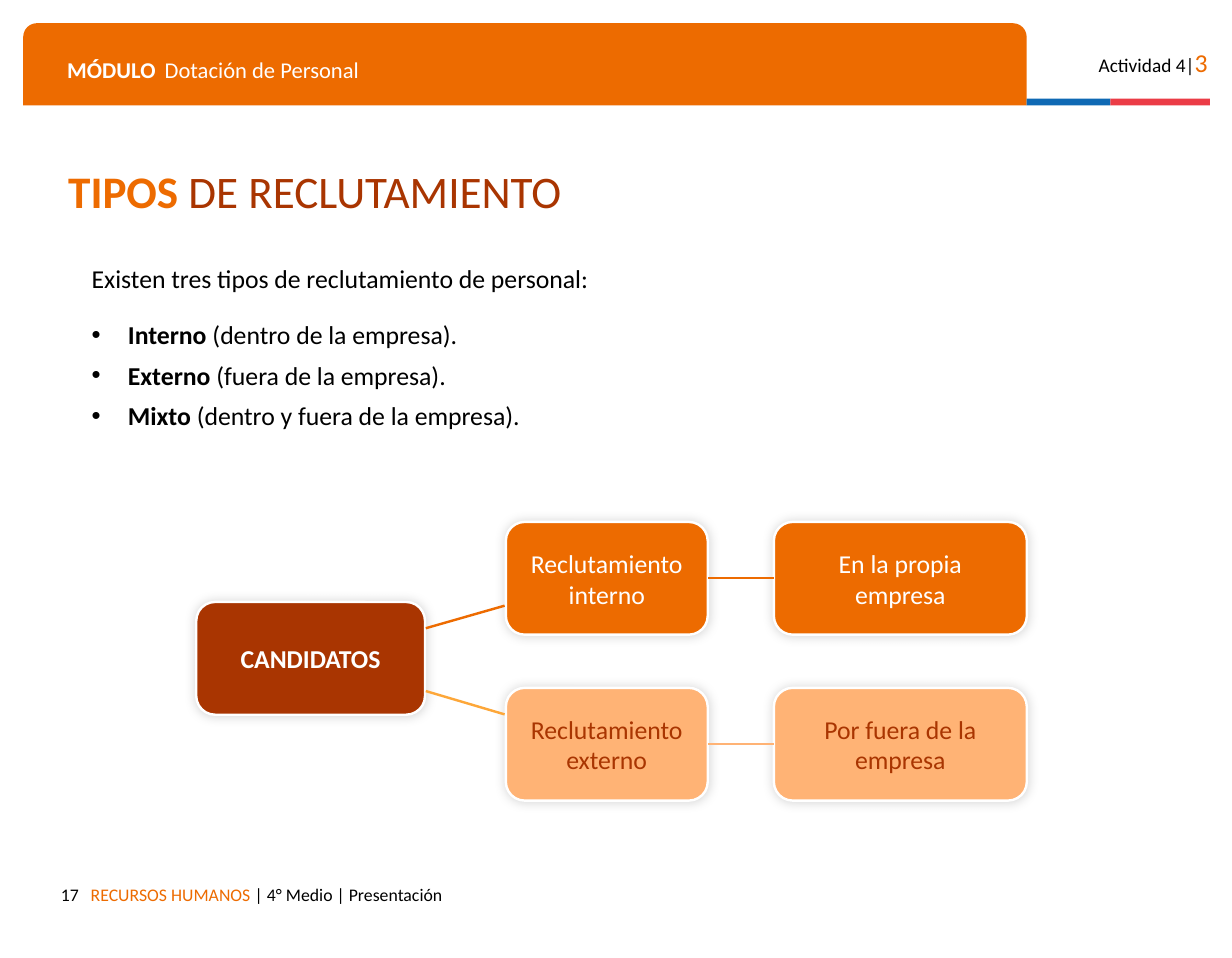
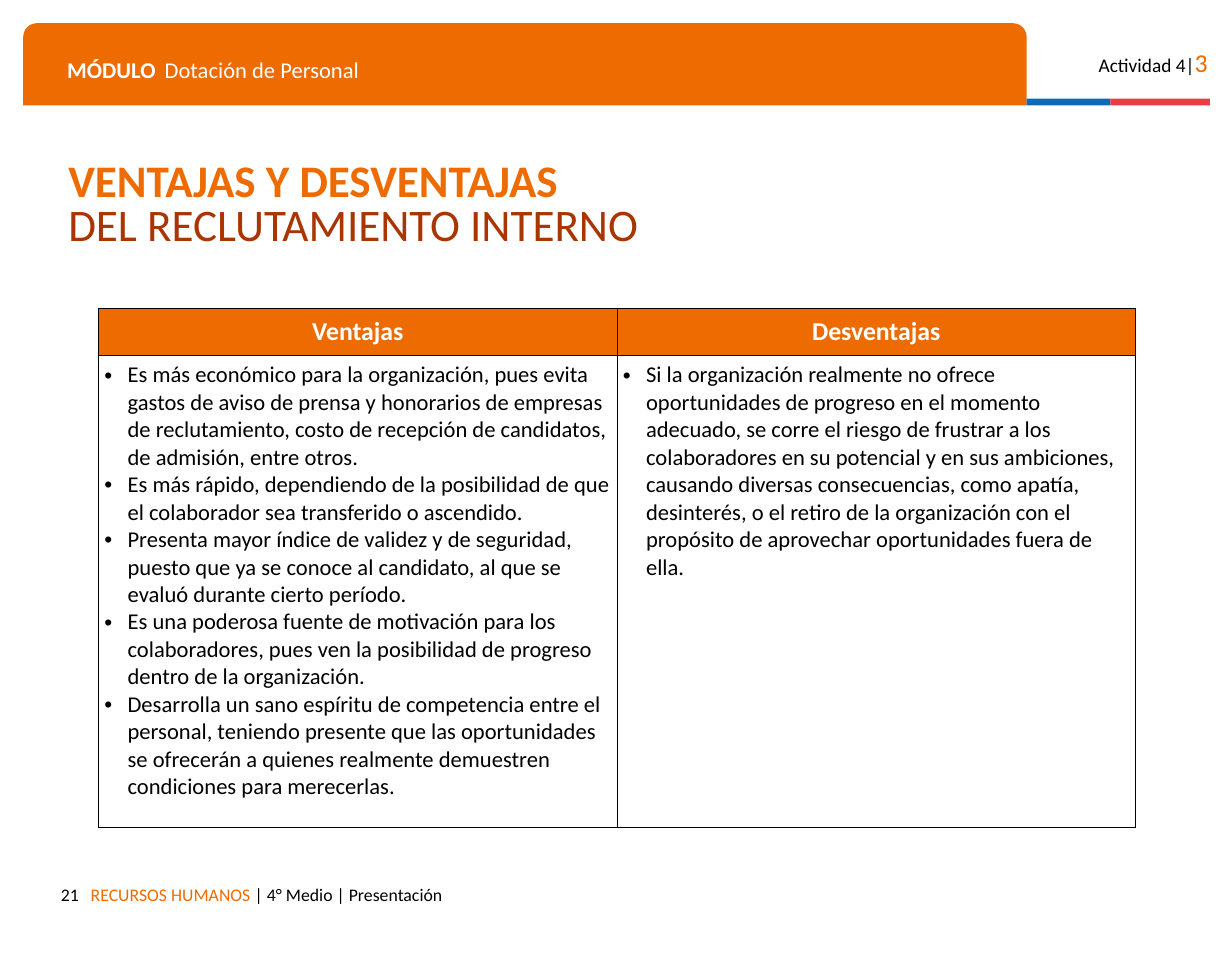
from dataclasses import dataclass

from lxml import etree
from pptx import Presentation
from pptx.dml import color
from pptx.enum import shapes, text
from pptx.oxml import ns
from pptx.util import Pt


@dataclass(frozen=True)
class Theme:
    font: str = "Calibri"
    orange: str = "ED6B00"
    rust: str = "A93501"
    peach: str = "FFB375"
    amber: str = "FDA739"
    blue: str = "0F69B4"
    red: str = "EB3C46"
    white: str = "FFFFFF"
    black: str = "000000"
    title: int = 28
    body: int = 16
    cell: int = 14
    activity: int = 12
    footer: int = 11
    line: float = 1.5


T = Theme()
MSO = shapes.MSO_SHAPE
ALIGN = text.PP_ALIGN
ANCHOR = text.MSO_ANCHOR


def rgb(value):
    return color.RGBColor.from_string(value)


def add_xml(parent, tag, **attrs):
    return etree.SubElement(parent, ns.qn(tag), attrs)


def set_font(font, size=None, fill=None, bold=None):
    if size:
        font.size = Pt(size)
    if fill:
        font.color.rgb = rgb(fill)
    if bold is not None:
        font.bold = bold


def style_paragraph(p, size, fill=T.black, bold=False, align=ALIGN.LEFT,
                    spacing=None, before=None, bullet=0, tab=0):
    p.alignment = align
    if spacing:
        p.line_spacing = spacing
    if before:
        p.space_before = Pt(before)
    pPr = p._p.get_or_add_pPr()
    if bullet:
        pPr.set("marL", str(Pt(bullet)))
        pPr.set("indent", str(-Pt(bullet)))
        add_xml(pPr, "a:buFont", typeface="Arial")
        add_xml(pPr, "a:buChar", char="•")
    if tab:
        tabs = add_xml(pPr, "a:tabLst")
        add_xml(tabs, "a:tab", pos=str(Pt(tab)), algn="l")
    p.font.name = T.font
    set_font(p.font, size, fill, bold)


def write(tf, paragraphs, size, gap=None, **style):
    for i, runs in enumerate(paragraphs):
        p = tf.paragraphs[0] if i == 0 else tf.add_paragraph()
        style_paragraph(p, size, before=gap if i else None, **style)
        for content, look in runs:
            r = p.add_run()
            r.text = content
            set_font(r.font, **look)


def set_margins(tf, inset):
    tf.margin_left = tf.margin_right = Pt(inset)
    tf.margin_top = tf.margin_bottom = Pt(inset)


def add_text(s, box, paragraphs, size, inset=7.2, anchor=ANCHOR.TOP, **style):
    tf = s.shapes.add_textbox(*map(Pt, box)).text_frame
    tf.word_wrap = True
    tf.vertical_anchor = anchor
    set_margins(tf, inset)
    write(tf, paragraphs, size, **style)


def add_block(s, kind, box, fill):
    sp = s.shapes.add_shape(kind, *map(Pt, box))
    sp.shadow.inherit = False
    sp.fill.solid()
    sp.fill.fore_color.rgb = rgb(fill)
    sp.line.fill.background()
    return sp


def add_node(s, box, label, fill, ink, bold=False):
    sp = add_block(s, MSO.ROUNDED_RECTANGLE, box, fill)
    sp.line.color.rgb = rgb(T.white)
    sp.line.width = Pt(T.line)
    effects = sp._element.spPr.find(ns.qn("a:effectLst"))
    shadow = add_xml(effects, "a:outerShdw", blurRad=str(Pt(7)), dist="0")
    add_xml(add_xml(shadow, "a:srgbClr", val=T.black), "a:alpha", val="16000")
    tf = sp.text_frame
    tf.word_wrap = True
    tf.vertical_anchor = ANCHOR.MIDDLE
    set_margins(tf, 9)
    write(tf, [[(label, {})]], T.body, fill=ink, bold=bold, align=ALIGN.CENTER)
    return sp


def add_line(s, start, end, stroke):
    line = s.shapes.add_connector(
        shapes.MSO_CONNECTOR.STRAIGHT, *map(Pt, (*start, *end)))
    line.line.color.rgb = rgb(stroke)
    line.line.width = Pt(T.line)
    add_xml(line._element.spPr, "a:effectLst")
    return line


def add_title(s, box, paragraphs):
    add_text(s, box, paragraphs, T.title, anchor=ANCHOR.MIDDLE,
             fill=T.rust, spacing=0.8)


def fill_cell(cell, paragraphs, size, back, **style):
    set_margins(cell, 3.6)
    tcPr = cell._tc.get_or_add_tcPr()
    for side in ("a:lnL", "a:lnR", "a:lnT", "a:lnB"):
        ln = add_xml(tcPr, side, w=str(Pt(0.75)))
        add_xml(add_xml(ln, "a:solidFill"), "a:srgbClr", val=T.black)
    cell.fill.solid()
    cell.fill.fore_color.rgb = rgb(back)
    write(cell.text_frame, paragraphs, size, **style)


def add_comparison(s, left, top, col_width, row_heights, columns):
    table = s.shapes.add_table(
        2, len(columns), Pt(left), Pt(top),
        Pt(col_width * len(columns)), Pt(sum(row_heights))).table
    table.first_row = table.horz_banding = False
    for row, height in zip(table.rows, row_heights):
        row.height = Pt(height)
    for i, (heading, items) in enumerate(columns):
        table.columns[i].width = Pt(col_width)
        head = table.cell(0, i)
        head.vertical_anchor = ANCHOR.MIDDLE
        fill_cell(head, [[(heading, {})]], T.body, T.orange,
                  fill=T.white, bold=True, align=ALIGN.CENTER)
        fill_cell(table.cell(1, i), [[(item, {})] for item in items],
                  T.cell, T.white, bullet=14.4)


def add_page(prs, number):
    s = prs.slides.add_slide(prs.slide_layouts[6])
    add_block(s, MSO.ROUND_2_SAME_RECTANGLE, (14.4, 14.4, 622.8, 51), T.orange)
    add_block(s, MSO.RECTANGLE, (637.2, 61.2, 52, 4.2), T.blue)
    add_block(s, MSO.RECTANGLE, (689.2, 61.2, 61.8, 4.2), T.red)
    add_text(s, (34.6, 27.4, 586, 29.5),
             [[("MÓDULO", {"bold": True}), ("\tDotación de Personal", {})]],
             T.cell, fill=T.white, tab=60.5)
    add_text(s, (664.6, 21.6, 92, 31),
             [[("Actividad 4|", {"size": T.activity}),
               ("3", {"size": T.body, "fill": T.orange})]],
             T.body, align=ALIGN.RIGHT)
    add_text(s, (49.2, 542.2, 515, 25),
             [[("RECURSOS HUMANOS ", {"fill": T.orange}),
               ("| 4° Medio | Presentación", {})]], T.footer)
    add_text(s, (24, 542.2, 32, 25), [[(str(number), {})]], T.footer,
             align=ALIGN.RIGHT)
    return s


def build_types(prs):
    s = add_page(prs, 17)
    strong = {"bold": True}
    add_title(s, (35.3, 100, 534, 42.5),
              [[("TIPOS ", {"fill": T.orange, "bold": True}),
                ("DE RECLUTAMIENTO", {})]])
    add_text(s, (53.3, 157, 378, 34),
             [[("Existen tres tipos de reclutamiento de personal:", {})]],
             T.body, inset=3.6, spacing=1.14)
    kinds = (("Interno", " (dentro de la empresa)."),
             ("Externo", " (fuera de la empresa)."),
             ("Mixto", " (dentro y fuera de la empresa)."))
    add_text(s, (53.3, 194.4, 375, 76),
             [[(name, strong), (where, {})] for name, where in kinds],
             T.body, inset=3.6, gap=6, bullet=22.5)

    add_node(s, (121.8, 373.7, 142, 70), "CANDIDATOS", T.rust, T.white, True)
    branches = (
        (324, "Reclutamiento interno", "En la propia empresa",
         T.orange, T.white, T.orange, 390, 376),
        (427, "Reclutamiento externo", "Por fuera de la empresa",
         T.peach, T.rust, T.amber, 429, 443.5))
    for top, kind, place, fill, ink, stroke, y_start, y_end in branches:
        source = add_node(s, (314, top, 125.3, 70), kind, fill, ink)
        target = add_node(s, (480.3, top, 157, 70), place, fill, ink)
        link = add_line(s, (439.3, top + 35), (480.3, top + 35), fill)
        link.begin_connect(source, 3)
        link.end_connect(target, 1)
        add_line(s, (264.3, y_start), (313.2, y_end), stroke)


def build_comparison(prs):
    s = add_page(prs, 21)
    add_title(s, (35.3, 93, 464.5, 70.5),
              [[("VENTAJAS Y DESVENTAJAS", {"fill": T.orange, "bold": True})],
               [("DEL RECLUTAMIENTO INTERNO", {})]])
    pros = (
        "Es más económico para la organización, pues evita gastos de aviso de "
        "prensa y honorarios de empresas de reclutamiento, costo de recepción "
        "de candidatos, de admisión, entre otros.",
        "Es más rápido, dependiendo de la posibilidad de que el colaborador "
        "sea transferido o ascendido.",
        "Presenta mayor índice de validez y de seguridad, puesto que ya se "
        "conoce al candidato, al que se evaluó durante cierto período.",
        "Es una poderosa fuente de motivación para los colaboradores, pues "
        "ven la posibilidad de progreso dentro de la organización.",
        "Desarrolla un sano espíritu de competencia entre el personal, "
        "teniendo presente que las oportunidades se ofrecerán a quienes "
        "realmente demuestren condiciones para merecerlas.")
    cons = (
        "Si la organización realmente no ofrece oportunidades de progreso en "
        "el momento adecuado, se corre el riesgo de frustrar a los "
        "colaboradores en su potencial y en sus ambiciones, causando diversas "
        "consecuencias, como apatía, desinterés, o el retiro de la "
        "organización con el propósito de aprovechar oportunidades fuera de "
        "ella.",)
    add_comparison(s, 61.2, 191.5, 321.8, (29.3, 293),
                   (("Ventajas", pros), ("Desventajas", cons)))


def main():
    prs = Presentation()
    prs.slide_width, prs.slide_height = Pt(764.64), Pt(594.72)
    build_types(prs)
    build_comparison(prs)
    prs.save("out.pptx")


if __name__ == "__main__":
    main()
